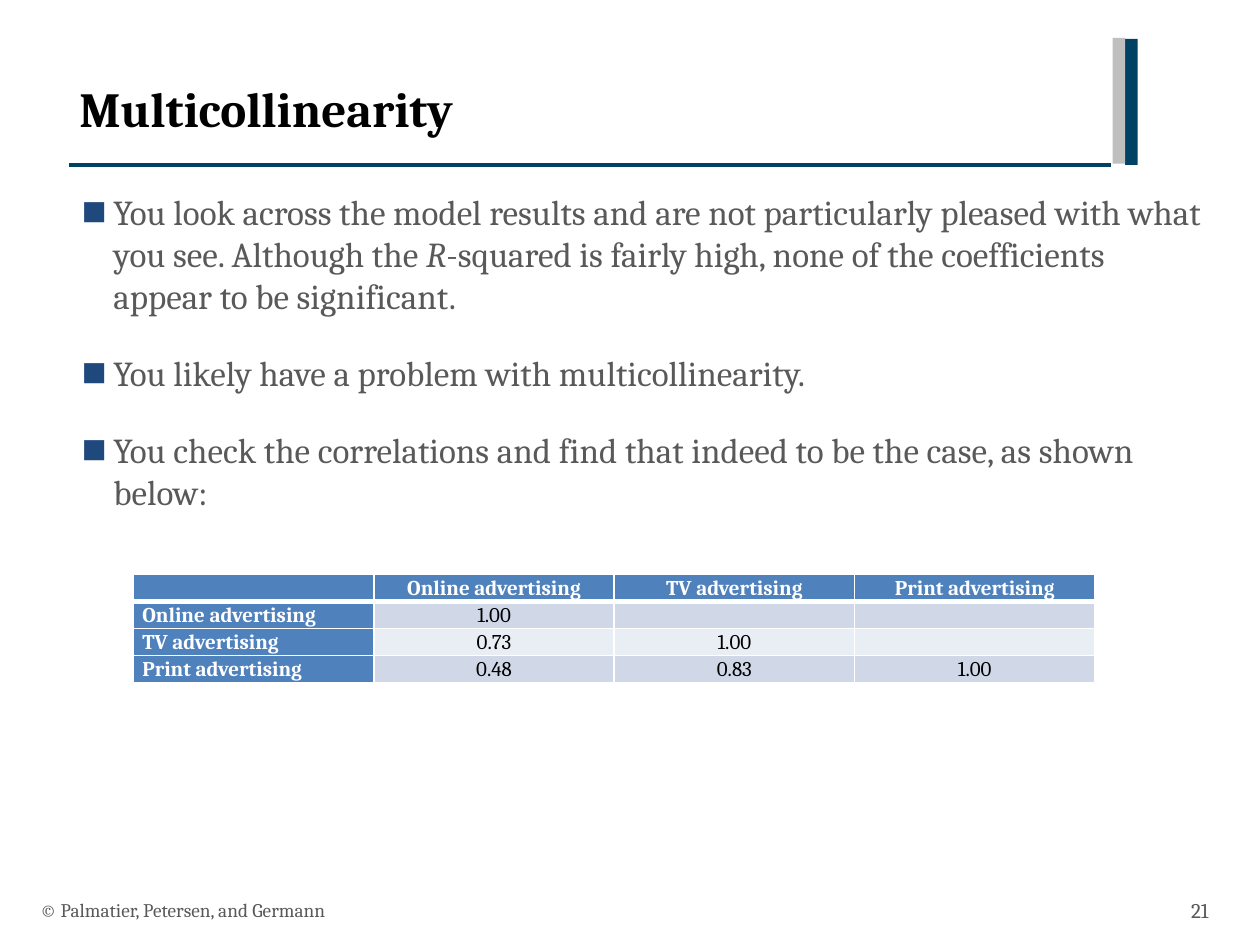
from lxml import etree
from pptx import Presentation
from pptx.dml.color import RGBColor
from pptx.enum.shapes import MSO_CONNECTOR, MSO_SHAPE
from pptx.enum.text import MSO_ANCHOR, MSO_AUTO_SIZE, PP_ALIGN
from pptx.oxml.ns import qn
from pptx.util import Inches, Pt

FONT = "Cambria"
COLORS = {
    "navy": "004264", "silver": "BFBFBF", "black": "000000", "white": "FFFFFF",
    "gray": "595959", "bullet": "1F497D", "header": "4F81BD",
    "band_dark": "D0D8E8", "band_light": "E9EDF4",
}
BULLETS = [
    [("You look across the model results and are not particularly pleased with "
      "what you see. Although the ", False),
     ("R", True),
     ("-squared is fairly high, none of the coefficients appear to be "
      "significant.", False)],
    [("You likely have a problem with multicollinearity.", False)],
    [("You check the correlations and find that indeed to be the case, as shown "
      "below:", False)],
]
CHANNELS = ["Online advertising", "TV advertising", "Print advertising"]
CORRELATIONS = [["1.00", "", ""], ["0.73", "1.00", ""], ["0.48", "0.83", "1.00"]]


def color(name):
    return RGBColor.from_string(COLORS[name])


def place(shape, box):
    shape.left, shape.top, shape.width, shape.height = map(Inches, box)


def add_run(paragraph, text, size, color_name, bold=False, italic=False):
    run = paragraph.add_run()
    run.text = text
    font = run.font
    font.name, font.size, font.bold, font.italic = FONT, Pt(size), bold, italic
    font.color.rgb = color(color_name)


def add_bar(slide, box, color_name):
    bar = slide.shapes.add_shape(MSO_SHAPE.RECTANGLE, *map(Inches, box))
    bar.shadow.inherit = False
    bar.fill.solid()
    bar.fill.fore_color.rgb = color(color_name)
    bar.line.fill.background()


def add_header_decoration(slide, box):
    """Draw the rule along the bottom and the two bars at the right end."""
    left, top, width, height = box
    bar_width = 0.1
    rule_y = top + height
    rule = slide.shapes.add_connector(
        MSO_CONNECTOR.STRAIGHT, Inches(left), Inches(rule_y),
        Inches(left + width - 2 * bar_width - 0.01), Inches(rule_y))
    rule.line.color.rgb = color("navy")
    rule.line.width = Pt(2)
    etree.SubElement(rule._element.spPr, qn("a:effectLst"))
    right = left + width
    add_bar(slide, (right - bar_width, top + 0.01, bar_width, 1), "navy")
    add_bar(slide, (right - 2 * bar_width, top, bar_width, 1), "silver")


def fill_title(slide, box):
    title = slide.shapes.title
    place(title, box)
    frame = title.text_frame
    frame.auto_size = MSO_AUTO_SIZE.NONE
    frame.vertical_anchor = MSO_ANCHOR.TOP
    paragraph = frame.paragraphs[0]
    paragraph.alignment = PP_ALIGN.LEFT
    add_run(paragraph, "Multicollinearity", 28, "black", bold=True)


def add_square_bullet(paragraph):
    properties = paragraph._p.get_or_add_pPr()
    properties.set("marL", str(Inches(0.25)))
    properties.set("indent", str(-Inches(0.25)))
    bullet_color = etree.SubElement(properties, qn("a:buClr"))
    etree.SubElement(bullet_color, qn("a:srgbClr"), val=COLORS["bullet"])
    etree.SubElement(properties, qn("a:buSzPct"), val="75000")
    etree.SubElement(properties, qn("a:buFont"), typeface=FONT)
    etree.SubElement(properties, qn("a:buChar"), char="■")


def fill_body(slide, box):
    body = slide.placeholders[1]
    place(body, box)
    frame = body.text_frame
    frame.auto_size = MSO_AUTO_SIZE.NONE
    for index, runs in enumerate(BULLETS):
        paragraph = frame.paragraphs[0] if index == 0 else frame.add_paragraph()
        add_square_bullet(paragraph)
        paragraph.space_before = Pt(20 if index else 0)
        for text, italic in runs:
            add_run(paragraph, text, 20, "gray", italic=italic)


def set_border(cell, side, width):
    line = etree.SubElement(cell._tc.get_or_add_tcPr(), qn(f"a:{side}"),
                            w=str(Pt(width)))
    fill = etree.SubElement(line, qn("a:solidFill"))
    etree.SubElement(fill, qn("a:srgbClr"), val=COLORS["white"])


def format_cell(cell, text, row, column):
    is_heading = row == 0 or column == 0
    for side in ("lnL", "lnR", "lnT", "lnB"):
        touches_header_rule = (row, side) in ((0, "lnB"), (1, "lnT"))
        set_border(cell, side, 3 if touches_header_rule else 1)
    cell.fill.solid()
    band = "band_dark" if row % 2 else "band_light"
    cell.fill.fore_color.rgb = color("header" if is_heading else band)
    cell.margin_left = cell.margin_right = Inches(0.07)
    cell.margin_top = cell.margin_bottom = 0
    paragraph = cell.text_frame.paragraphs[0]
    paragraph.line_spacing = 1.07
    paragraph.alignment = PP_ALIGN.CENTER if column else PP_ALIGN.LEFT
    if text:
        add_run(paragraph, text, 12, "white" if is_heading else "black",
                bold=is_heading)
    else:
        etree.SubElement(paragraph._p, qn("a:endParaRPr"), sz="1200")


def add_correlation_table(slide, box):
    rows = [["", *CHANNELS]]
    rows += [[channel, *values] for channel, values in zip(CHANNELS, CORRELATIONS)]
    table = slide.shapes.add_table(len(rows), len(rows[0]), *map(Inches, box)).table
    for row, texts in enumerate(rows):
        for column, text in enumerate(texts):
            format_cell(table.cell(row, column), text, row, column)


def add_footer_text(slide, box, text, size, alignment):
    frame = slide.shapes.add_textbox(*map(Inches, box)).text_frame
    frame.word_wrap = True
    frame.vertical_anchor = MSO_ANCHOR.MIDDLE
    paragraph = frame.paragraphs[0]
    paragraph.alignment = alignment
    add_run(paragraph, text, size, "gray")


def main():
    presentation = Presentation()
    presentation.slide_width, presentation.slide_height = Inches(10), Inches(7.5)
    slide = presentation.slides.add_slide(presentation.slide_layouts[1])
    add_header_decoration(slide, (0.55, 0.3, 8.48, 1.01))
    fill_title(slide, (0.53, 0.57, 8.26, 0.88))
    fill_body(slide, (0.55, 1.46, 9.14, 5.41))
    add_footer_text(slide, (0.22, 7.02, 6.7, 0.4),
                    "© Palmatier, Petersen, and Germann", 11, PP_ALIGN.LEFT)
    add_footer_text(slide, (9.08, 7.02, 0.61, 0.4), "21", 12, PP_ALIGN.RIGHT)
    add_correlation_table(slide, (1.06, 4.56, 7.63, 0.81))
    presentation.save("out.pptx")


if __name__ == "__main__":
    main()
